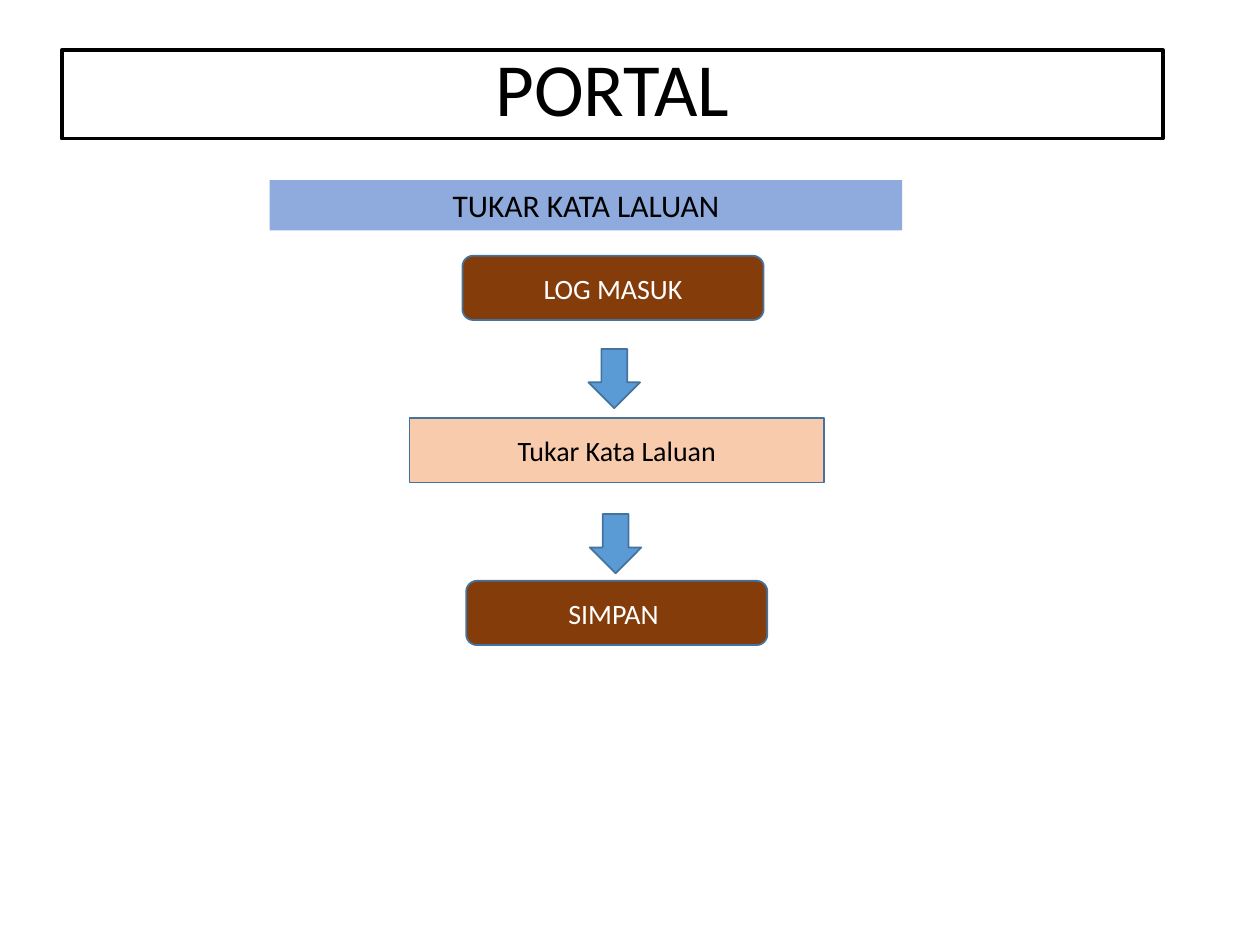
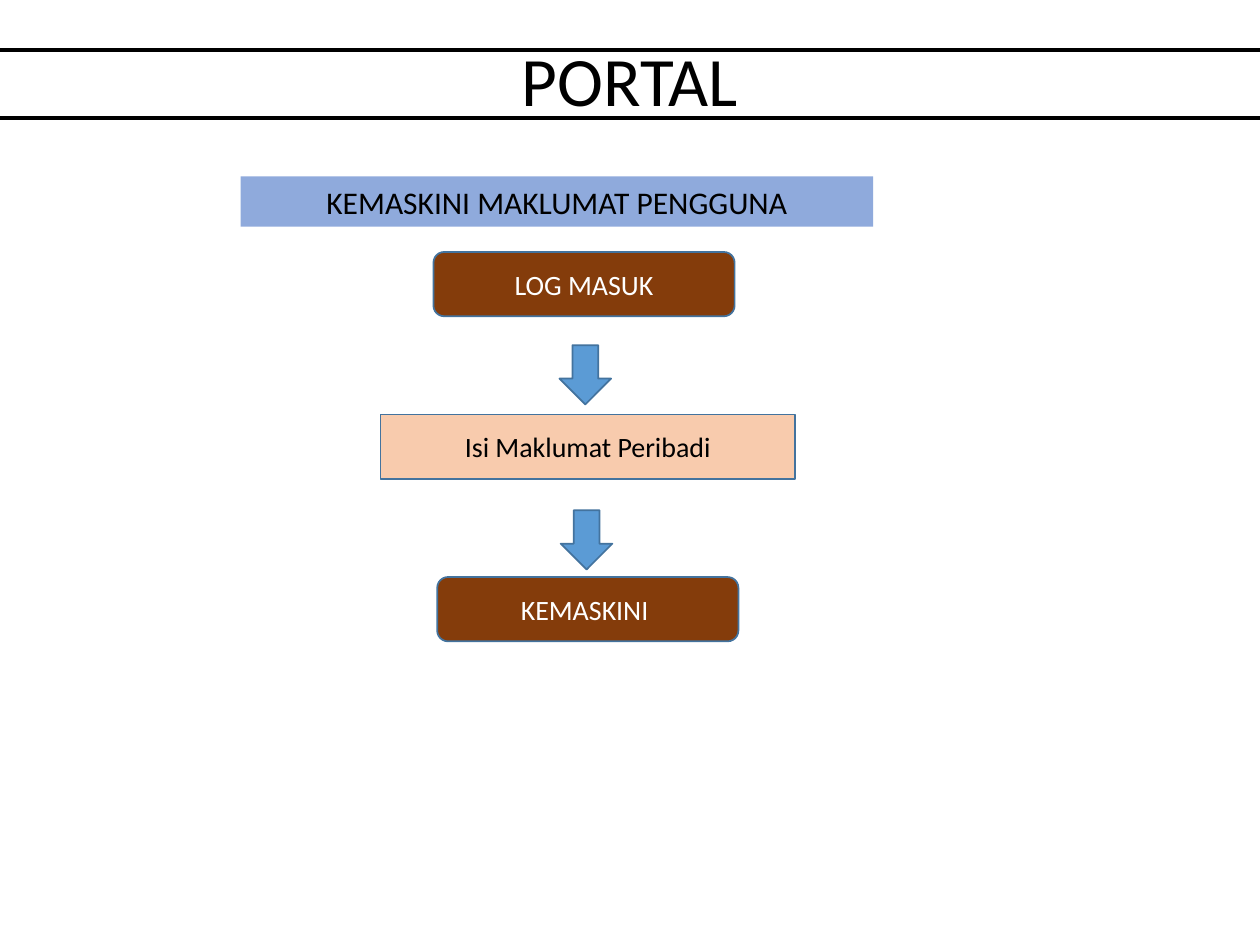
from pptx import Presentation
from pptx.dml.color import RGBColor
from pptx.enum.shapes import MSO_SHAPE as Preset
from pptx.enum.text import MSO_ANCHOR as Anchor, PP_ALIGN as Align
from pptx.util import Inches, Pt

# Content: title box, top-left corner of the flow, banner and three steps
SLIDES = [
    {"title": "PORTAL", "title_box": (0.49, 0.4, 8.74, 0.7),
     "title_size": 42.9, "title_spacing": 0.8, "origin": (2.14, 1.43),
     "banner": "TUKAR KATA LALUAN",
     "steps": ["LOG MASUK", "Tukar Kata Laluan", "SIMPAN "]},
    {"title": "PORTAL", "title_box": (-0.75, 0.4, 11.5, 0.54),
     "title_size": 39.6, "title_spacing": 0.9, "origin": (1.91, 1.4),
     "banner": "KEMASKINI MAKLUMAT PENGGUNA",
     "steps": ["LOG MASUK", "Isi Maklumat Peribadi", "KEMASKINI "]},
]

# Shared look
FONT = "Calibri"
BLACK = RGBColor(0x00, 0x00, 0x00)
WHITE = RGBColor(0xFF, 0xFF, 0xFF)
BROWN = RGBColor(0x84, 0x3C, 0x0B)
PEACH = RGBColor(0xF8, 0xCB, 0xAD)
BANNER_BLUE = RGBColor(0x8F, 0xAA, 0xDC)
ARROW_BLUE = RGBColor(0x5B, 0x9B, 0xD5)
OUTLINE = RGBColor(0x43, 0x73, 0x9E)

BUTTON = {"preset": Preset.ROUNDED_RECTANGLE, "fill": BROWN, "line": OUTLINE}
ACTION = {"preset": Preset.RECTANGLE, "fill": PEACH, "line": OUTLINE}
ARROW = {"preset": Preset.RIGHT_ARROW, "fill": ARROW_BLUE, "line": OUTLINE}
BANNER = {"preset": Preset.RECTANGLE, "fill": BANNER_BLUE}
TITLE = {"preset": Preset.RECTANGLE, "line": BLACK, "line_width": 2.25}

# Flow layout, measured from the banner's top-left corner
BANNER_SIZE = (5.02, 0.4)
STEP_TOP, STEP_PITCH, STEP_HEIGHT = 0.6, 1.29, 0.51
STEPS = [  # left, width, style, text colour
    (1.53, 2.39, BUTTON, WHITE),
    (1.11, 3.29, ACTION, BLACK),
    (1.56, 2.39, BUTTON, WHITE),
]
ARROW_LEFT, ARROW_TOP, ARROW_PITCH = 2.5, 1.37, 1.31
ARROW_SIZE = (0.47, 0.41)


def add_box(slide, box, style):
    shape = slide.shapes.add_shape(style["preset"], *map(Inches, box))
    shape.shadow.inherit = False
    if "fill" in style:
        shape.fill.solid()
        shape.fill.fore_color.rgb = style["fill"]
    else:
        shape.fill.background()
    if "line" in style:
        shape.line.color.rgb = style["line"]
        shape.line.width = Pt(style.get("line_width", 1))
    else:
        shape.line.fill.background()
    return shape


def write(shape, text, size, color=BLACK, anchor=Anchor.MIDDLE, spacing=None):
    frame = shape.text_frame
    frame.word_wrap = True
    frame.vertical_anchor = anchor
    paragraph = frame.paragraphs[0]
    paragraph.alignment = Align.CENTER
    paragraph.line_spacing = spacing
    run = paragraph.add_run()
    run.text = text
    for name, value in {"name": FONT, "size": Pt(size)}.items():
        setattr(run.font, name, value)
    run.font.color.rgb = color


def add_flow(slide, content):
    left, top = content["origin"]
    # Banner
    banner = add_box(slide, (left, top, *BANNER_SIZE), BANNER)
    write(banner, content["banner"], 18, anchor=Anchor.TOP)
    # Steps
    for index, (text, step) in enumerate(zip(content["steps"], STEPS)):
        offset, width, style, color = step
        step_top = top + STEP_TOP + index * STEP_PITCH
        shape = add_box(slide, (left + offset, step_top, width, STEP_HEIGHT), style)
        write(shape, text, 16, color)
    # Arrows between the steps
    for index in range(len(STEPS) - 1):
        arrow_left = left + ARROW_LEFT + index * 0.01
        arrow_top = top + ARROW_TOP + index * ARROW_PITCH
        arrow = add_box(slide, (arrow_left, arrow_top, *ARROW_SIZE), ARROW)
        arrow.rotation = 90


def main():
    presentation = Presentation()
    presentation.slide_width = Inches(10)
    presentation.slide_height = Inches(7.5)
    for content in SLIDES:
        slide = presentation.slides.add_slide(presentation.slide_layouts[6])
        title = add_box(slide, content["title_box"], TITLE)
        write(title, content["title"], content["title_size"],
              spacing=content["title_spacing"])
        add_flow(slide, content)
    presentation.save("out.pptx")


if __name__ == "__main__":
    main()
